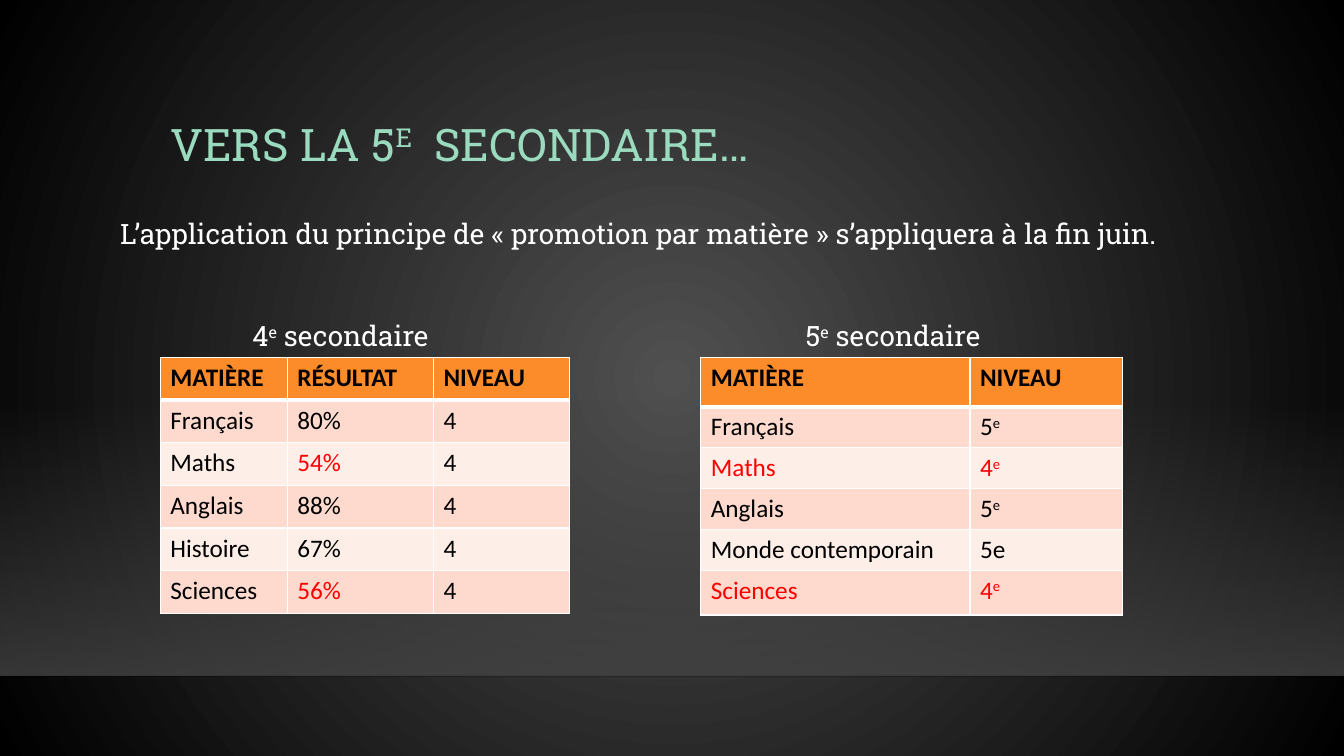
from lxml import etree
from pptx import Presentation
from pptx import util as u
from pptx.dml.color import RGBColor
from pptx.enum import shapes, text
from pptx.oxml.ns import nsdecls, qn

CENTRE = ('<a:path path="circle"><a:fillToRect l="50000" t="50000" '
          'r="50000" b="50000"/></a:path>')
DOWNWARD = '<a:lin ang="5400000" scaled="0"/>'


def colour(value):
    return RGBColor.from_string(value)


def element(tag, inner="", attributes=""):
    return etree.fromstring(
        f'<a:{tag} {nsdecls("a")} {attributes}>{inner}</a:{tag}>')


def write(paragraph, content, size=18, font="Calibri", hue="000000",
          bold=False, spacing=None):
    properties = paragraph._p.get_or_add_pPr()
    properties.set("marL", "0")
    properties.set("indent", "0")
    properties.append(element("buNone"))
    paragraph.alignment = text.PP_ALIGN.LEFT
    paragraph.line_spacing = spacing
    paragraph.space_before = u.Pt(0)
    for index, part in enumerate(content.split("^")):
        if part:
            run = paragraph.add_run()
            run.text = part
            run.font.size = u.Pt(size)
            run.font.name = font
            run.font.bold = bold
            run.font.color.rgb = colour(hue)
            if index % 2:
                run.font._element.set("baseline", "30000")


class Deck:
    heading_font = "Roboto Slab"
    mint, white, red, black = "9ADABE", "FFFFFF", "FF0000", "000000"
    header, bands = "FB8C29", ("FEEEE8", "FDDACD")

    def __init__(self):
        self.show = Presentation()
        self.show.slide_width = u.Inches(13.33)
        self.show.slide_height = u.Inches(7.5)
        self.slide = self.show.slides.add_slide(self.show.slide_layouts[1])

    def x(self, columns):
        return int(self.show.slide_width * columns / 100)

    def y(self, rows):
        return int(self.show.slide_height * rows / 100)

    def box(self, left, top, width, height):
        return self.x(left), self.y(top), self.x(width), self.y(height)

    def gradient(self, fill, owner, stops, direction):
        fill.solid()
        plain = owner.find(".//" + qn("a:solidFill"))
        steps = "".join(
            f'<a:gs pos="{place * 1000}"><a:srgbClr val="{value}">'
            f'<a:alpha val="{opacity * 1000}"/></a:srgbClr></a:gs>'
            for place, value, opacity in stops)
        plain.getparent().replace(
            plain, element("gradFill", f"<a:gsLst>{steps}</a:gsLst>{direction}"))

    def background(self, inner, outer):
        self.gradient(self.slide.background.fill, self.slide._element,
                      [(0, inner, 100), (100, outer, 100)], CENTRE)

    def floor(self, area, value):
        glow = self.slide.shapes.add_shape(
            shapes.MSO_SHAPE.RECTANGLE, *self.box(*area))
        glow.shadow.inherit = False
        glow.line.fill.background()
        self.gradient(glow.fill, glow._element.spPr,
                      [(0, value, 0), (100, value, 80)], DOWNWARD)
        self.slide.shapes._spTree.insert(2, glow._element)

    def horizon(self, row):
        edge = self.slide.shapes.add_connector(
            shapes.MSO_CONNECTOR.STRAIGHT, 0, self.y(row), self.x(100), self.y(row))
        edge.line.width = u.Pt(1)
        edge.line.color.rgb = colour("000001")
        properties = edge._element.spPr
        properties.find(".//" + qn("a:srgbClr")).append(
            element("alpha", attributes='val="20000"'))
        properties.append(element("effectLst"))
        self.slide.shapes._spTree.insert(3, edge._element)

    def placeholder(self, index, area, anchor):
        holder = self.slide.placeholders[index]
        holder.left, holder.top, holder.width, holder.height = self.box(*area)
        frame = holder.text_frame
        frame.word_wrap = True
        frame.auto_size = text.MSO_AUTO_SIZE.NONE
        frame.vertical_anchor = anchor
        return frame

    def title(self, area, content):
        frame = self.placeholder(0, area, text.MSO_ANCHOR.MIDDLE)
        write(frame.paragraphs[0], content, size=32, font=self.heading_font,
              hue=self.mint, spacing=0.9)

    def body(self, area, principle):
        frame = self.placeholder(1, area, text.MSO_ANCHOR.TOP)
        write(frame.paragraphs[0], principle, size=20, font=self.heading_font,
              hue=self.white, spacing=1.2)

    def caption(self, area, content):
        frame = self.slide.shapes.add_textbox(*self.box(*area)).text_frame
        frame.word_wrap = True
        write(frame.paragraphs[0], content, size=20, font=self.heading_font,
              hue=self.white)

    def border(self, cell, row):
        properties = cell._tc.get_or_add_tcPr()
        weights = {"L": 1, "R": 1, "T": 3 if row == 1 else 1,
                   "B": 3 if row == 0 else 1}
        for side, weight in weights.items():
            properties.append(element(
                f"ln{side}",
                f'<a:solidFill><a:srgbClr val="{self.white}"/></a:solidFill>',
                f'w="{weight * 12700}"'))

    def table(self, left, top, widths, heights, records, alerts):
        grid = self.slide.shapes.add_table(
            len(records), len(widths),
            *self.box(left, top, sum(widths), sum(heights))).table
        for column, width in zip(grid.columns, widths):
            column.width = self.x(width)
        for row, (record, height) in enumerate(zip(records, heights)):
            grid.rows[row].height = self.y(height)
            for column, content in enumerate(record):
                cell = grid.cell(row, column)
                self.border(cell, row)
                cell.fill.solid()
                cell.fill.fore_color.rgb = colour(
                    self.bands[row % 2] if row else self.header)
                write(cell.text_frame.paragraphs[0], content, bold=row == 0,
                      hue=self.red if content in alerts else self.black)


def main():
    deck = Deck()
    deck.background("505050", "000000")
    deck.floor((0, 52.8, 100, 36.53), "454545")
    deck.horizon(89.47)
    deck.title((11.93, 11.73, 76.2, 15.33), "VERS LA 5^E^  SECONDAIRE…")
    deck.body((8.18, 27.07, 79.9, 58.27),
              "L’application du principe de « promotion par matière » "
              "s’appliquera à la fin juin.")
    for left, year in ((18.03, "4^e^ secondaire"), (59.2, "5^e^ secondaire")):
        deck.caption((left, 41.5, 16, 5.7), year)

    results = [("MATIÈRE", "RÉSULTAT", "NIVEAU")] + [
        (subject, result, "4") for subject, result in (
            ("Français", "80%"), ("Maths", "54%"), ("Anglais", "88%"),
            ("Histoire", "67%"), ("Sciences", "56%"))]
    deck.table(11.93, 47.3, (9.45, 10.88, 10.13), [5.64] * 6,
               results, {"54%", "56%"})

    promotions = [("MATIÈRE", "NIVEAU"), ("Français", "5^e^"),
                  ("Maths", "4^e^"), ("Anglais", "5^e^"),
                  ("Monde contemporain", "5e"), ("Sciences", "4^e^")]
    deck.table(52.14, 47.3, (20.03, 11.33), [6.53] + [5.4] * 4 + [5.95],
               promotions, {"Maths", "Sciences", "4^e^"})
    deck.show.save("out.pptx")


if __name__ == "__main__":
    main()
